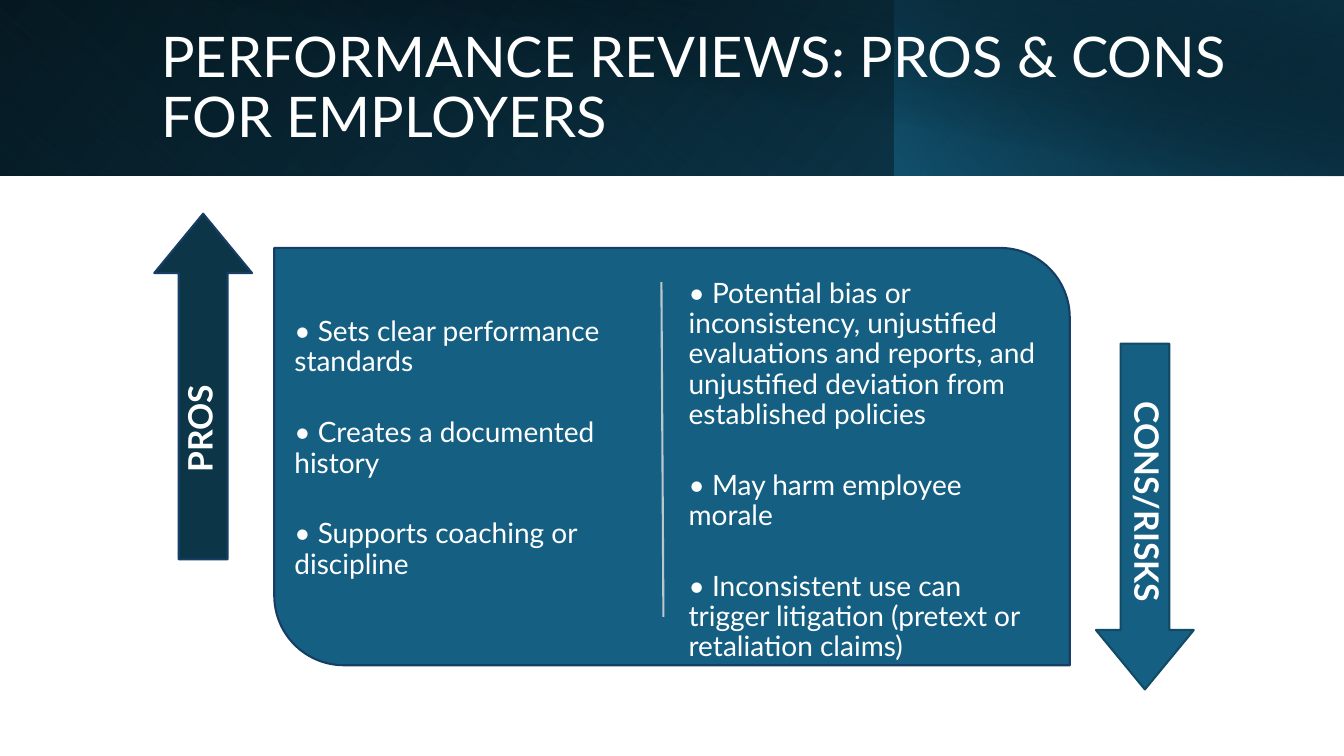
from dataclasses import dataclass

from lxml.etree import SubElement
from pptx import Presentation
from pptx.dml.color import RGBColor as Rgb
from pptx.enum.shapes import MSO_CONNECTOR as Link, MSO_SHAPE as Kind
from pptx.enum.text import MSO_ANCHOR as Anchor, PP_ALIGN as Align
from pptx.oxml.ns import qn
from pptx.util import Inches, Pt


@dataclass(frozen=True)
class Theme:
    font: str = "Lato"
    white: str = "FFFFFF"
    black: str = "000000"
    blue: str = "156082"
    deep: str = "104862"
    dark: str = "0B3041"
    navy: str = "0C3548"
    edge: str = "163E64"
    rim: str = "114B66"
    rule: str = "BDC5CD"
    title: int = 40
    body: int = 20
    label: int = 24
    line: float = 1.5


LOOK = Theme()

PROS = (
    "• Sets clear performance standards",
    "• Creates a documented history",
    "• Supports coaching or discipline",
)
CONS = (
    "• Potential bias or inconsistency, unjustified evaluations and reports, "
    "and unjustified deviation from established policies",
    "• May harm employee morale",
    "• Inconsistent use can trigger litigation (pretext or retaliation claims)",
)


def apply(target, values):
    for name, value in values.items():
        setattr(target, name, value)


def add_shape(slide, kind, box, fill=None, line=None, adjust=(), turn=0):
    shape = slide.shapes.add_shape(kind, *map(Inches, box))
    shape.shadow.inherit = False
    shape.rotation = turn
    for i, value in enumerate(adjust):
        shape.adjustments[i] = value
    if fill:
        shape.fill.solid()
        shape.fill.fore_color.rgb = Rgb.from_string(fill)
    if line:
        shape.line.color.rgb = Rgb.from_string(line)
        shape.line.width = Pt(LOOK.line)
    else:
        shape.line.fill.background()
    return shape


def add_fade(slide, box, angle, stops):
    """Add a rectangle with a gradient of (position, colour, opacity) stops."""
    shape = add_shape(slide, Kind.RECTANGLE, box)
    shape.fill.gradient()
    grad = shape._element.spPr.find(qn("a:gradFill"))
    for child in list(grad):
        grad.remove(child)
    group = SubElement(grad, qn("a:gsLst"))
    for pos, color, alpha in stops:
        stop = SubElement(group, qn("a:gs"), pos=str(pos * 1000))
        tint = SubElement(stop, qn("a:srgbClr"), val=color)
        if alpha < 100:
            SubElement(tint, qn("a:alpha"), val=str(alpha * 1000))
    SubElement(grad, qn("a:lin"), ang=str(angle * 60000), scaled="0")


def add_text(slide, box, lines, size, inset=(0.1, 0.05), turn=0,
             anchor=Anchor.TOP, align=Align.LEFT, bold=False, gap=0):
    shape = slide.shapes.add_textbox(*map(Inches, box))
    shape.rotation = turn
    frame = shape.text_frame
    side, top = map(Inches, inset)
    apply(frame, {
        "word_wrap": True, "vertical_anchor": anchor,
        "margin_left": side, "margin_right": side,
        "margin_top": top, "margin_bottom": top,
    })
    for i, line in enumerate(lines):
        para = frame.add_paragraph() if i else frame.paragraphs[0]
        apply(para, {"alignment": align, "line_spacing": 0.9,
                     "space_after": Pt(gap)})
        run = para.add_run()
        run.text = line
        apply(run.font, {"name": LOOK.font, "size": Pt(size), "bold": bold})
        run.font.color.rgb = Rgb.from_string(LOOK.white)


def add_rule(slide, start, end):
    rule = slide.shapes.add_connector(
        Link.STRAIGHT, *map(Inches, start + end))
    rule.line.color.rgb = Rgb.from_string(LOOK.rule)
    rule.line.width = Pt(LOOK.line)
    SubElement(rule._element.spPr, qn("a:effectLst"))


def add_arrow(slide, left, top, turn, fill, line, label, mid):
    """Add a turned arrow, its label centred on the point mid."""
    add_shape(slide, Kind.RIGHT_ARROW, (left, top, 3.43, 0.97),
              fill, line, (0.498, 0.607), turn)
    wide, high = 3.13, 0.49
    x, y = mid
    add_text(slide, (x - wide / 2, y - high / 2, wide, high), [label],
             LOOK.label, (0.1, 0.1), turn, Anchor.MIDDLE, Align.CENTER, True)


def add_banner(slide):
    add_fade(slide, (0, 0, 13.33, 1.74), 40,
             [(0, LOOK.black, 100), (100, LOOK.deep, 100)])
    add_fade(slide, (0, 0, 8.88, 1.74), 130,
             [(20, LOOK.blue, 0), (100, LOOK.dark, 55)])
    add_fade(slide, (8.87, 0, 4.46, 1.74), 320,
             [(0, LOOK.blue, 66), (100, LOOK.black, 30)])
    add_fade(slide, (0.5, 0, 12.83, 1.75), 280,
             [(50, LOOK.black, 0), (99, LOOK.dark, 52)])
    add_text(slide, (1.5, 0.32, 10.82, 1.13),
             ["PERFORMANCE REVIEWS: PROS & CONS FOR EMPLOYERS"],
             LOOK.title, anchor=Anchor.MIDDLE)


def add_panel(slide):
    add_shape(slide, Kind.ROUND_2_DIAG_RECTANGLE, (2.72, 2.46, 7.89, 4.14),
              LOOK.blue, LOOK.edge, (0, 0.167))
    add_rule(slide, (6.56, 2.8), (6.58, 6.12))
    for box, lines in (((2.84, 3.07, 3.6, 2.66), PROS),
                       ((6.75, 2.69, 3.68, 3.27), CONS)):
        add_text(slide, box, lines, LOOK.body, (0.08, 0.08), gap=29)


def main():
    deck = Presentation()
    apply(deck, {"slide_width": Inches(13.33), "slide_height": Inches(7.5)})
    slide = deck.slides.add_slide(deck.slide_layouts[6])
    add_banner(slide)
    add_panel(slide)
    add_arrow(slide, 0.3, 3.35, 270, LOOK.navy, LOOK.edge,
              "PROS", (2, 4.25))
    add_arrow(slide, 9.64, 4.64, 90, LOOK.blue, LOOK.rim,
              "CONS/RISKS", (11.36, 4.98))
    deck.save("out.pptx")


if __name__ == "__main__":
    main()
